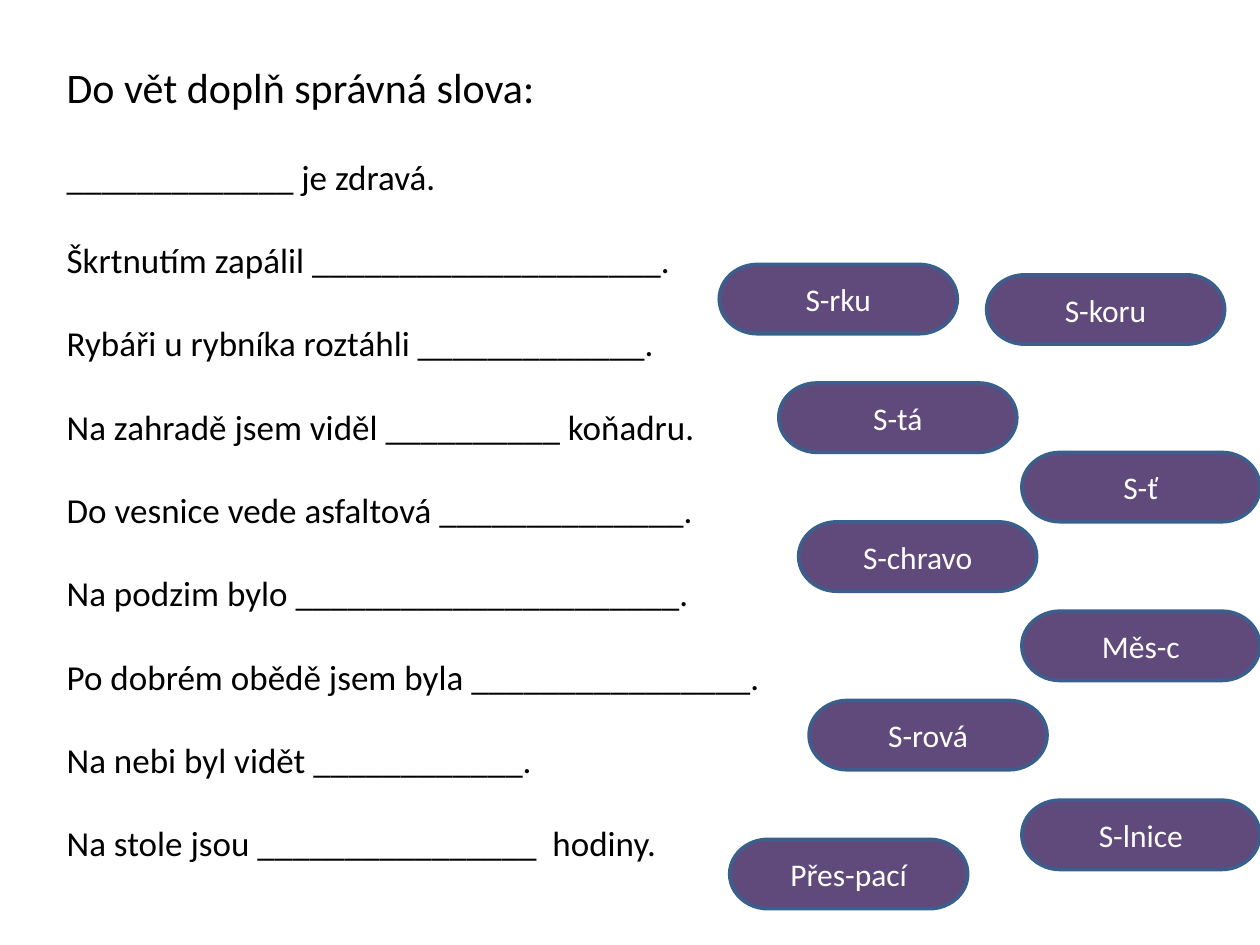
from dataclasses import dataclass

from lxml.etree import SubElement
from pptx import Presentation
from pptx.dml.color import RGBColor
from pptx.enum.shapes import MSO_SHAPE
from pptx.enum.text import MSO_ANCHOR, MSO_AUTO_SIZE, PP_ALIGN
from pptx.oxml.ns import qn
from pptx.util import Cm, Pt


@dataclass(frozen=True)
class Theme:
    """Colours, font and type sizes of the slide."""
    font: str = "Calibri"
    text: RGBColor = RGBColor(0x00, 0x00, 0x00)
    pill: RGBColor = RGBColor(0x60, 0x4A, 0x7B)
    outline: RGBColor = RGBColor(0x3A, 0x5F, 0x8C)
    pill_text: RGBColor = RGBColor(0xFF, 0xFF, 0xFF)
    title_size: Pt = Pt(24)
    body_size: Pt = Pt(20)
    pill_size: Pt = Pt(18)


THEME = Theme()
TITLE = "Do vět doplň správná slova:"
SENTENCES = [
    "_____________ je zdravá.",
    "Škrtnutím zapálil ____________________.",
    "Rybáři u rybníka roztáhli _____________.",
    "Na zahradě jsem viděl __________ koňadru.",
    "Do vesnice vede asfaltová ______________.",
    "Na podzim bylo ______________________.",
    "Po dobrém obědě jsem byla ________________.",
    "Na nebi byl vidět ____________.",
    "Na stole jsou ________________  hodiny.",
]
WORDS = [
    ("S-rku", 0, 0),
    ("S-ť", 6.1, 3.79),
    ("S-chravo", 1.6, 5.19),
    ("Měs-c", 6.1, 6.99),
    ("S-rová", 1.81, 8.79),
    ("S-lnice", 6.1, 10.8),
    ("S-koru", 5.39, 0.21),
    ("S-tá", 1.2, 2.39),
    ("Přes-pací", 0.21, 11.59),
]


def place(sp, left, top, width, height):
    """Move and size a shape, in centimetres."""
    sp.left, sp.top, sp.width, sp.height = map(Cm, (left, top, width, height))


def add_run(p, text, size, color):
    """Append a formatted run to a paragraph."""
    r = p.add_run()
    r.text = text
    r.font.name = THEME.font
    r.font.size = size
    r.font.color.rgb = color


def set_frame(sp, anchor):
    """Return the shape's wrapping text frame with a fixed size."""
    tf = sp.text_frame
    tf.word_wrap = True
    tf.auto_size = MSO_AUTO_SIZE.NONE
    tf.vertical_anchor = anchor
    return tf


def fill_exercise(s, left, top, width, height):
    """Fill the title and the sentence list inside the given box."""
    title_height = 1.88
    title, body = s.shapes.title, s.placeholders[1]
    place(title, left, top, width, title_height)
    p = set_frame(title, MSO_ANCHOR.TOP).paragraphs[0]
    p.alignment = PP_ALIGN.LEFT
    add_run(p, TITLE, THEME.title_size, THEME.text)

    place(body, left, top + title_height, width, height - title_height)
    tf = set_frame(body, MSO_ANCHOR.TOP)
    for i, sentence in enumerate(SENTENCES):
        p = tf.add_paragraph() if i else tf.paragraphs[0]
        p.space_before = Pt(0)
        p.space_after = Pt(23.6)
        pPr = p._p.get_or_add_pPr()
        pPr.set("marL", "0")
        pPr.set("indent", "0")
        SubElement(pPr, qn("a:buNone"))
        add_run(p, sentence, THEME.body_size, THEME.text)


def add_words(s, left, top, width, height):
    """Scatter word pills of the given size from the given corner."""
    for word, dx, dy in WORDS:
        sp = s.shapes.add_shape(
            MSO_SHAPE.FLOWCHART_TERMINATOR,
            Cm(left + dx), Cm(top + dy), Cm(width), Cm(height))
        sp.shadow.inherit = False
        sp.fill.solid()
        sp.fill.fore_color.rgb = THEME.pill
        sp.line.color.rgb = THEME.outline
        sp.line.width = Pt(2)
        p = set_frame(sp, MSO_ANCHOR.MIDDLE).paragraphs[0]
        p.alignment = PP_ALIGN.CENTER
        add_run(p, word, THEME.pill_size, THEME.pill_text)


def main():
    """Build and save the exercise slide."""
    prs = Presentation()
    prs.slide_width, prs.slide_height = Cm(25.4), Cm(19.05)
    s = prs.slides.add_slide(prs.slide_layouts[1])
    fill_exercise(s, 1.09, 1.12, 16.41, 16.66)
    add_words(s, 14.5, 5.33, 4.8, 1.4)
    prs.save("out.pptx")


if __name__ == "__main__":
    main()
